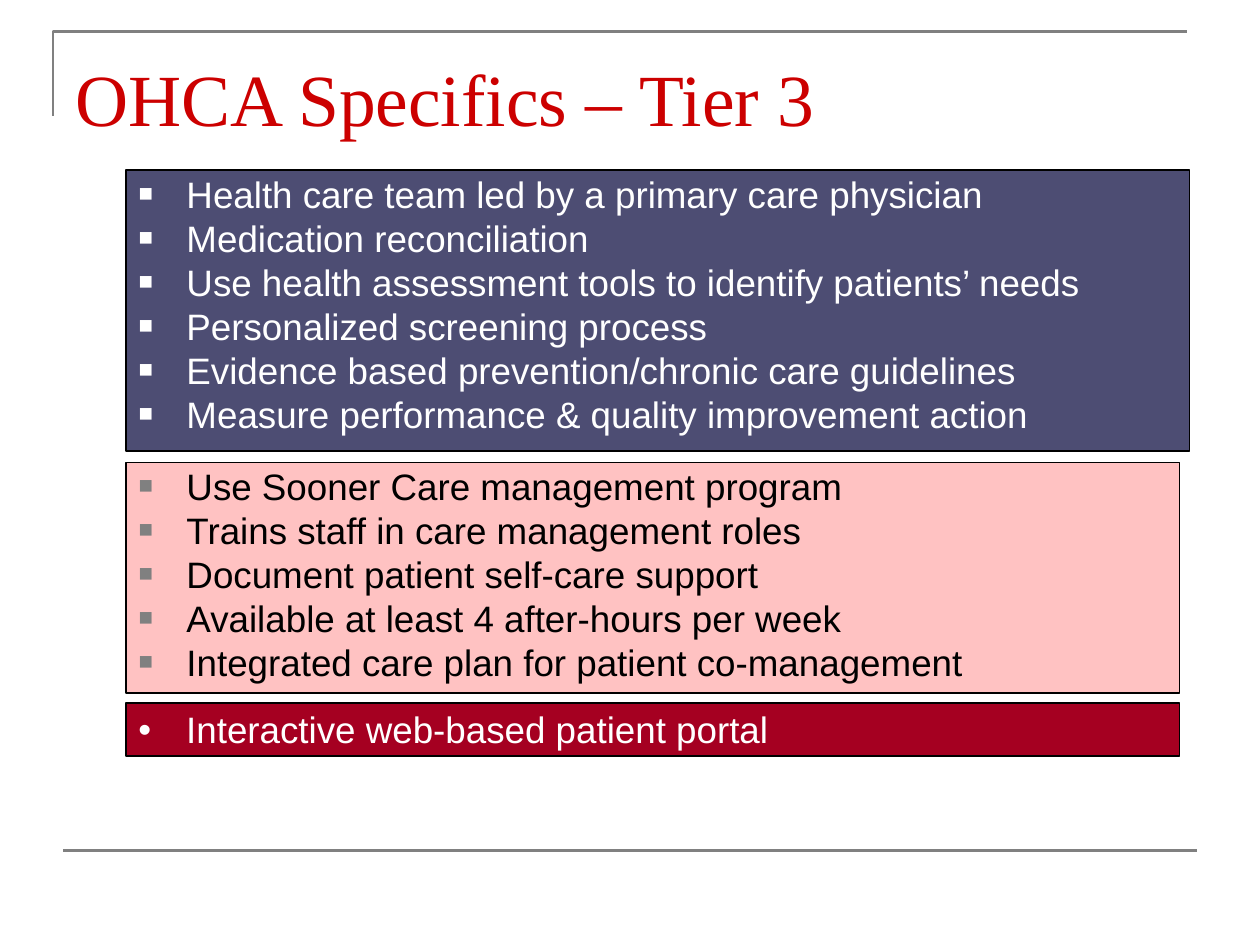
from lxml import etree
from pptx import Presentation
from pptx.dml.color import RGBColor
from pptx.enum.shapes import MSO_CONNECTOR as CONN, MSO_SHAPE as SHAPE
from pptx.enum.text import MSO_ANCHOR as ANCHOR, MSO_AUTO_SIZE as AUTO, PP_ALIGN as ALIGN
from pptx.oxml.ns import qn
from pptx.util import Inches, Pt

CARE = [
    "Health care team led by a primary care physician",
    "Medication reconciliation",
    "Use health assessment tools to identify patients’ needs",
    "Personalized screening process",
    "Evidence based prevention/chronic care guidelines",
    "Measure performance & quality improvement action",
]
MANAGEMENT = [
    "Use Sooner Care management program",
    "Trains staff in care management roles",
    "Document patient self-care support",
    "Available at least 4 after-hours per week",
    "Integrated care plan for patient co-management",
]
PORTAL = ["Interactive web-based patient portal"]


def rgb(value):
    """Return the colour for a hex string."""
    return RGBColor.from_string(value)


def place(s, left, top, width, height):
    """Set the position and size of a shape in inches."""
    s.left, s.top = Inches(left), Inches(top)
    s.width, s.height = Inches(width), Inches(height)


def set_frame(tf, top):
    """Anchor a text frame at the top with the given top inset."""
    tf.word_wrap = True
    tf.auto_size = AUTO.NONE
    tf.vertical_anchor = ANCHOR.TOP
    tf.margin_left = tf.margin_right = Inches(0.1)
    tf.margin_top, tf.margin_bottom = Inches(top), Inches(0.05)


def set_font(font, name, size, color):
    """Set the typeface, size and colour of a font."""
    font.name, font.size = name, Pt(size)
    font.color.rgb = rgb(color)


def add_bullet(p, char, color, percent):
    """Give a paragraph a hanging bullet."""
    pPr = p._p.get_or_add_pPr()
    pPr.set("marL", str(Inches(0.38)))
    pPr.set("indent", str(-Inches(0.38)))
    clr = etree.SubElement(pPr, qn("a:buClr"))
    etree.SubElement(clr, qn("a:srgbClr"), val=color)
    etree.SubElement(pPr, qn("a:buSzPct"), val=str(percent * 1000))
    etree.SubElement(pPr, qn("a:buFont"), typeface="Arial")
    etree.SubElement(pPr, qn("a:buChar"), char=char)


def fill_box(s, items, fill, color, bullet, spacing=0.8, top=0.08):
    """Turn a shape into a bordered, coloured bullet list."""
    s.fill.solid()
    s.fill.fore_color.rgb = rgb(fill)
    s.line.color.rgb = rgb("000000")
    s.line.width = Pt(0.75)
    tf = s.text_frame
    set_frame(tf, top)
    for i, item in enumerate(items):
        p = tf.paragraphs[0] if i == 0 else tf.add_paragraph()
        p.text = item
        add_bullet(p, *bullet)
        p.alignment = ALIGN.LEFT
        p.line_spacing = spacing
        p.space_before = Pt(5 if i else 0)
        set_font(p.runs[0].font, "Arial", 21, color)


def add_title(s, text):
    """Write the slide title."""
    place(s, 0.5, 0.3, 9, 1.25)
    tf = s.text_frame
    tf.text = text
    set_frame(tf, 0.12)
    p = tf.paragraphs[0]
    p.alignment = ALIGN.LEFT
    set_font(p.runs[0].font, "Times New Roman", 42, "CC0000")


def style_rule(s):
    """Give a line the grey rule style."""
    s.line.color.rgb = rgb("808080")
    s.line.width = Pt(1.5)


def add_frame_rules(shapes):
    """Draw the corner rule at the top and the rule at the bottom."""
    builder = shapes.build_freeform(Inches(0.42), Inches(0.92), scale=1.0)
    builder.add_line_segments(
        [(Inches(0.42), Inches(0.25)), (Inches(9.42), Inches(0.25))], close=False)
    corner = builder.convert_to_shape()
    corner.fill.background()
    corner.shadow.inherit = False
    style_rule(corner)
    rule = shapes.add_connector(
        CONN.STRAIGHT, Inches(0.5), Inches(6.75), Inches(9.5), Inches(6.75))
    style_rule(rule)
    etree.SubElement(rule._element.spPr, qn("a:effectLst"))


def main():
    """Build and save the slide."""
    prs = Presentation()
    prs.slide_width, prs.slide_height = Inches(10), Inches(7.5)
    slide = prs.slides.add_slide(prs.slide_layouts[3])
    title, care, management = slide.placeholders
    add_frame_rules(slide.shapes)
    add_title(title, "OHCA Specifics – Tier 3")
    place(care, 1, 1.35, 8.44, 2.23)
    fill_box(care, CARE, "4D4D73", "FFFFFF", ("■", "FFFFFF", 65))
    place(management, 1, 3.67, 8.36, 1.83)
    fill_box(management, MANAGEMENT, "FFC2C2", "000000", ("■", "808080", 65))
    portal = slide.shapes.add_shape(
        SHAPE.RECTANGLE, Inches(1), Inches(5.58), Inches(8.36), Inches(0.42))
    portal.shadow.inherit = False
    fill_box(portal, PORTAL, "A50021", "FFFFFF", ("•", "FFFFFF", 100), 0.9, 0.07)
    prs.save("out.pptx")


if __name__ == "__main__":
    main()
